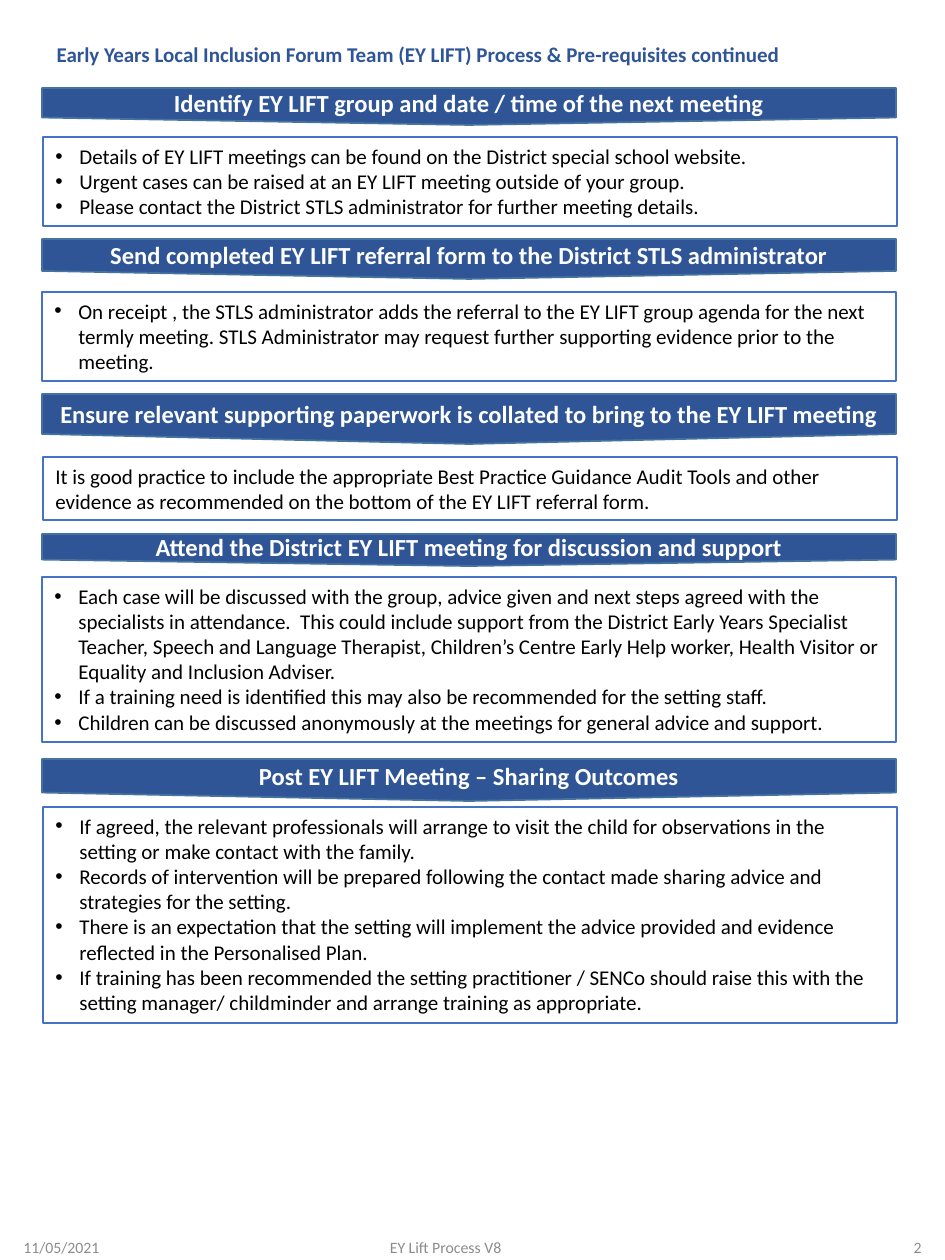
from pptx import Presentation
from pptx import util as u
from pptx.dml.color import RGBColor
from pptx.enum import shapes, text
from pptx.oxml.xmlchemy import OxmlElement

PX = 914400 / 126
FONT = "Calibri"
NAVY = RGBColor(0x2F, 0x55, 0x97)
BANNER_EDGE = RGBColor(0x43, 0x73, 0x9E)
BOX_EDGE = RGBColor(0x44, 0x72, 0xC4)
WHITE = RGBColor(0xFF, 0xFF, 0xFF)
BLACK = RGBColor(0, 0, 0)
GREY = RGBColor(0x8C, 0x8C, 0x8C)

LEFT, WIDTH = 42, 854
INDENT = 24

# Banner text, banner top and height, box left, top and height, bulleted, box text
SECTIONS = [
    ("Identify EY LIFT group and date / time of the next meeting",
     (88, 37), (43, 137, 89), True,
     ["Details of EY LIFT meetings can be found on the District special school website.",
      "Urgent cases can be raised at an EY LIFT meeting outside of your group.",
      "Please contact the District STLS administrator for further meeting details."]),
    ("Send completed EY LIFT referral form to the District STLS administrator",
     (239, 40), (42, 292, 89), True,
     ["On receipt , the STLS administrator adds the referral to the EY LIFT group agenda "
      "for the next termly meeting. STLS Administrator may request further supporting "
      "evidence prior to the meeting."]),
    ("Ensure relevant supporting paperwork is collated to bring to the EY LIFT meeting",
     (394, 50), (43, 457, 63), False,
     ["It is good practice to include the appropriate Best Practice Guidance Audit Tools "
      "and other evidence as recommended on the bottom of the EY LIFT referral form."]),
    ("Attend the District EY LIFT meeting for discussion and support",
     (534, 32), (42, 577, 165), True,
     ["Each case will be discussed with the group, advice given and next steps agreed with "
      "the specialists in attendance.  This could include support from the District Early "
      "Years Specialist Teacher, Speech and Language Therapist, Children’s Centre Early "
      "Help worker, Health Visitor or Equality and Inclusion Adviser.",
      "If a training need is identified this may also be recommended for the setting staff.",
      "Children can be discussed anonymously at the meetings for general advice and support."]),
    ("Post EY LIFT Meeting – Sharing Outcomes",
     (759, 42), (43, 807, 216), True,
     ["If agreed, the relevant professionals will arrange to visit the child for "
      "observations in the setting or make contact with the family.",
      "Records of intervention will be prepared following the contact made sharing advice "
      "and strategies for the setting.",
      "There is an expectation that the setting will implement the advice provided and "
      "evidence reflected in the Personalised Plan.",
      "If training has been recommended the setting practitioner / SENCo should raise this "
      "with the setting manager/ childminder and arrange training as appropriate."]),
]

# Footer text, left, width and alignment
FOOTERS = [
    ("11/05/2021", 11, 213, text.PP_ALIGN.LEFT),
    ("EY Lift Process V8", 286, 319, text.PP_ALIGN.CENTER),
    ("2", 721, 213, text.PP_ALIGN.RIGHT),
]


def px(*lengths):
    return [u.Emu(round(length * PX)) for length in lengths]


def add_bullet(paragraph):
    properties = paragraph._p.get_or_add_pPr()
    margin = px(INDENT)[0]
    properties.set("marL", str(margin))
    properties.set("indent", str(-margin))
    bullet_font = OxmlElement("a:buFont")
    bullet_font.set("typeface", "Arial")
    bullet = OxmlElement("a:buChar")
    bullet.set("char", "•")
    properties.extend([bullet_font, bullet])


def write(frame, lines, size, color, bold=False, align=text.PP_ALIGN.LEFT,
          anchor=text.MSO_ANCHOR.TOP, bulleted=False):
    frame.word_wrap = True
    frame.auto_size = text.MSO_AUTO_SIZE.NONE
    frame.vertical_anchor = anchor
    for index, line in enumerate(lines):
        paragraph = frame.add_paragraph() if index else frame.paragraphs[0]
        paragraph.alignment = align
        paragraph.line_spacing = 1.0
        paragraph.space_before = u.Pt(0)
        if bulleted:
            add_bullet(paragraph)
        run = paragraph.add_run()
        run.text = line
        run.font.name = FONT
        run.font.size = u.Pt(size)
        run.font.bold = bold
        run.font.color.rgb = color


def add_title(slide, heading):
    title = slide.shapes.title
    title.left, title.top, title.width, title.height = px(44, 35, 852, 38)
    write(title.text_frame, [heading], 12, NAVY, bold=True)


def add_banner(slide, heading, top, height):
    banner = slide.shapes.add_shape(shapes.MSO_SHAPE.FLOWCHART_OFFPAGE_CONNECTOR,
                                    *px(LEFT, top, WIDTH, height))
    banner.shadow.inherit = False
    banner.fill.solid()
    banner.fill.fore_color.rgb = NAVY
    banner.line.color.rgb = BANNER_EDGE
    banner.line.width = u.Pt(1)
    write(banner.text_frame, [heading], 14, WHITE, bold=True,
          align=text.PP_ALIGN.CENTER, anchor=text.MSO_ANCHOR.MIDDLE)


def add_details(slide, lines, left, top, height, bulleted):
    details = slide.shapes.add_shape(shapes.MSO_SHAPE.RECTANGLE,
                                     *px(left, top, WIDTH, height))
    details.shadow.inherit = False
    details.fill.background()
    details.line.color.rgb = BOX_EDGE
    details.line.width = u.Pt(0.75)
    write(details.text_frame, lines, 12, BLACK, bulleted=bulleted)


def add_footer(slide, words, left, width, align):
    footer = slide.shapes.add_textbox(*px(left, 1235, width, 24))
    write(footer.text_frame, [words], 9, GREY, align=align,
          anchor=text.MSO_ANCHOR.MIDDLE)


def main():
    deck = Presentation()
    deck.slide_width, deck.slide_height = u.Inches(7.5), u.Inches(10)
    slide = deck.slides.add_slide(deck.slide_layouts[5])

    add_title(slide, "Early Years Local Inclusion Forum Team (EY LIFT) "
                     "Process & Pre-requisites continued")

    # Process steps: a banner over a box of details
    for heading, banner_place, box_place, bulleted, lines in SECTIONS:
        add_banner(slide, heading, *banner_place)
        add_details(slide, lines, *box_place, bulleted)

    # Page footer
    for footer in FOOTERS:
        add_footer(slide, *footer)

    deck.save("out.pptx")


if __name__ == "__main__":
    main()
